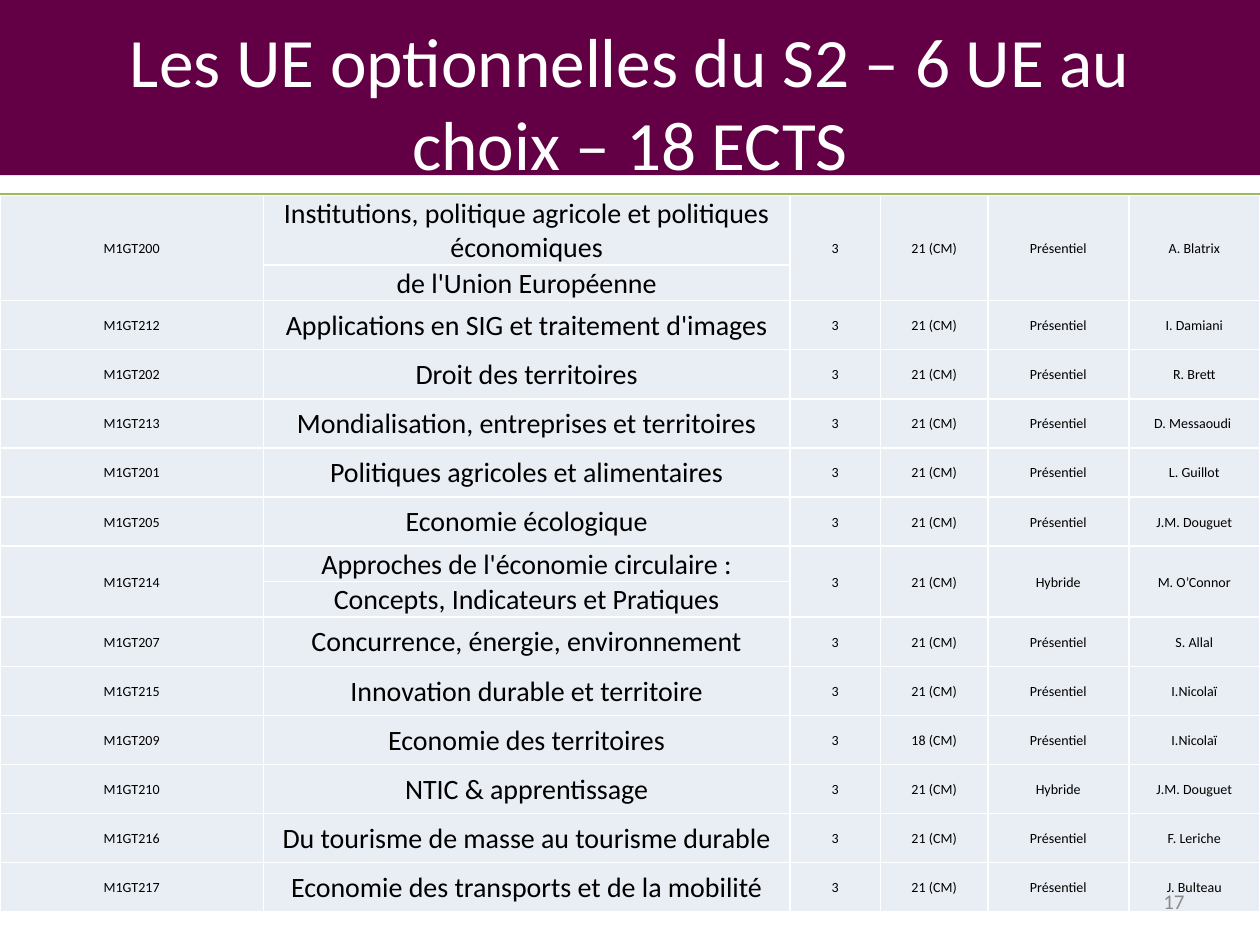
from lxml.etree import SubElement
from pptx import Presentation
from pptx.dml.color import RGBColor
from pptx.enum.shapes import MSO_SHAPE as Shape
from pptx.enum.text import MSO_ANCHOR as Anchor, MSO_AUTO_SIZE as AutoSize, PP_ALIGN as Align
from pptx.oxml.ns import qn
from pptx.util import Inches, Pt

TITLE = "Les UE optionnelles du S2 – 6 UE au choix – 18 ECTS"
PAGE_NUMBER = "17"
# code, lines of the course name (one table row each), credits, hours, mode, teacher
COURSES = [
    ("M1GT200", ("Institutions, politique agricole et politiques économiques",
                 "de l'Union Européenne"), "3", "21 (CM)", "Présentiel", "A. Blatrix"),
    ("M1GT212", ("Applications en SIG et traitement d'images",),
     "3", "21 (CM)", "Présentiel", "I. Damiani"),
    ("M1GT202", ("Droit des territoires",), "3", "21 (CM)", "Présentiel", "R. Brett"),
    ("M1GT213", ("Mondialisation, entreprises et territoires",),
     "3", "21 (CM)", "Présentiel", "D. Messaoudi "),
    ("M1GT201", ("Politiques agricoles et alimentaires",),
     "3", "21 (CM)", "Présentiel", "L. Guillot"),
    ("M1GT205", ("Economie écologique",), "3", "21 (CM)", "Présentiel", "J.M. Douguet"),
    ("M1GT214", ("Approches de l'économie circulaire :",
                 "Concepts, Indicateurs et Pratiques"), "3", "21 (CM)", "Hybride", "M. O’Connor"),
    ("M1GT207", ("Concurrence, énergie, environnement",),
     "3", "21 (CM)", "Présentiel", "S. Allal"),
    ("M1GT215", ("Innovation durable et territoire",), "3", "21 (CM)", "Présentiel", "I.Nicolaï"),
    ("M1GT209", ("Economie des territoires",), "3", "18 (CM)", "Présentiel", "I.Nicolaï"),
    ("M1GT210", ("NTIC & apprentissage",), "3", "21 (CM)", "Hybride", "J.M. Douguet"),
    ("M1GT216", ("Du tourisme de masse au tourisme durable",),
     "3", "21 (CM)", "Présentiel", "F. Leriche"),
    ("M1GT217", ("Economie des transports et de la mobilité",),
     "3", "21 (CM)", "Présentiel", "J. Bulteau"),
]

COLUMN_WIDTHS = (2.09, 4.18, 0.72, 0.85, 1.12, 1.04)
NAME_COLUMN = 1
SINGLE_ROW, SPLIT_ROW, WRAPPED_ROW = 0.39, 0.28, 0.55
LONGEST_LINE = 45  # characters of a course name that fit on one line
TABLE_TOP = 1.55
FONT = "Calibri"
PLUM, GREEN, WHITE, PALE, BLACK, GREY = "630045", "9BBB59", "FFFFFF", "E9EDF4", "000000", "8C8C8C"


def color(value):
    return RGBColor.from_string(value)


def write(frame, text, size, ink=BLACK, align=Align.CENTER):
    frame.word_wrap = True
    para = frame.paragraphs[0]
    para.alignment = align
    span = para.add_run()
    span.text = text
    span.font.name, span.font.size = FONT, Pt(size)
    span.font.color.rgb = color(ink)


def add_panel(page, top, height, fill, line=None):
    """Add a rectangle across the full width of the page."""
    panel = page.shapes.add_shape(Shape.RECTANGLE, 0, Inches(top), Inches(10), Inches(height))
    panel.shadow.inherit = False
    panel.fill.solid()
    panel.fill.fore_color.rgb = color(fill)
    if line:
        panel.line.color.rgb, panel.line.width = color(line), Pt(2)
    else:
        panel.line.fill.background()


def style_cell(cell):
    properties = cell._tc.get_or_add_tcPr()
    for side in ("lnL", "lnR", "lnT", "lnB"):
        border = SubElement(properties, qn(f"a:{side}"), w=str(Pt(1)))
        SubElement(SubElement(border, qn("a:solidFill")), qn("a:srgbClr"), val=WHITE)
    cell.fill.solid()
    cell.fill.fore_color.rgb = color(PALE)
    cell.vertical_anchor = Anchor.MIDDLE
    cell.margin_left = cell.margin_right = cell.margin_top = Inches(0.01)
    cell.margin_bottom = 0


def row_height(line, parts):
    if len(line) > LONGEST_LINE:
        return WRAPPED_ROW
    return SPLIT_ROW if len(parts) > 1 else SINGLE_ROW


def add_course_table(page):
    heights = [row_height(line, course[NAME_COLUMN])
               for course in COURSES for line in course[NAME_COLUMN]]
    table = page.shapes.add_table(len(heights), len(COLUMN_WIDTHS), 0, Inches(TABLE_TOP),
                                  Inches(sum(COLUMN_WIDTHS)), Inches(sum(heights))).table
    table.first_row = table.horz_banding = False
    for column, width in zip(table.columns, COLUMN_WIDTHS):
        column.width = Inches(width)
    for row, height in zip(table.rows, heights):
        row.height = Inches(height)
    for cell in table.iter_cells():
        style_cell(cell)

    top = 0
    for course in COURSES:
        bottom = top + len(course[NAME_COLUMN]) - 1
        for column, value in enumerate(course):
            if column == NAME_COLUMN:
                for offset, line in enumerate(value):
                    write(table.cell(top + offset, column).text_frame, line, 16)
                continue
            cell = table.cell(top, column)
            if bottom > top:
                cell.merge(table.cell(bottom, column))
            write(cell.text_frame, value, 8)
        top = bottom + 1


def main():
    deck = Presentation()
    deck.slide_width, deck.slide_height = Inches(10), Inches(7.5)
    page = deck.slides.add_slide(deck.slide_layouts[5])

    add_panel(page, 0, 1.39, PLUM)
    add_panel(page, TABLE_TOP, 5.23, GREEN, line=GREEN)
    add_course_table(page)

    title = page.shapes.title
    title.left, title.top, title.width, title.height = map(Inches, (0.5, 0.3, 9, 1.01))
    title.text_frame.auto_size = AutoSize.NONE
    title.text_frame.vertical_anchor = Anchor.MIDDLE
    write(title.text_frame, TITLE, 39.6, ink=WHITE)
    page.shapes._spTree.append(title._element)  # bring in front of the plum band

    number = page.shapes.add_textbox(*map(Inches, (7.17, 6.95, 2.33, 0.4)))
    number.text_frame.vertical_anchor = Anchor.MIDDLE
    write(number.text_frame, PAGE_NUMBER, 12, ink=GREY, align=Align.RIGHT)

    deck.save("out.pptx")


if __name__ == "__main__":
    main()
